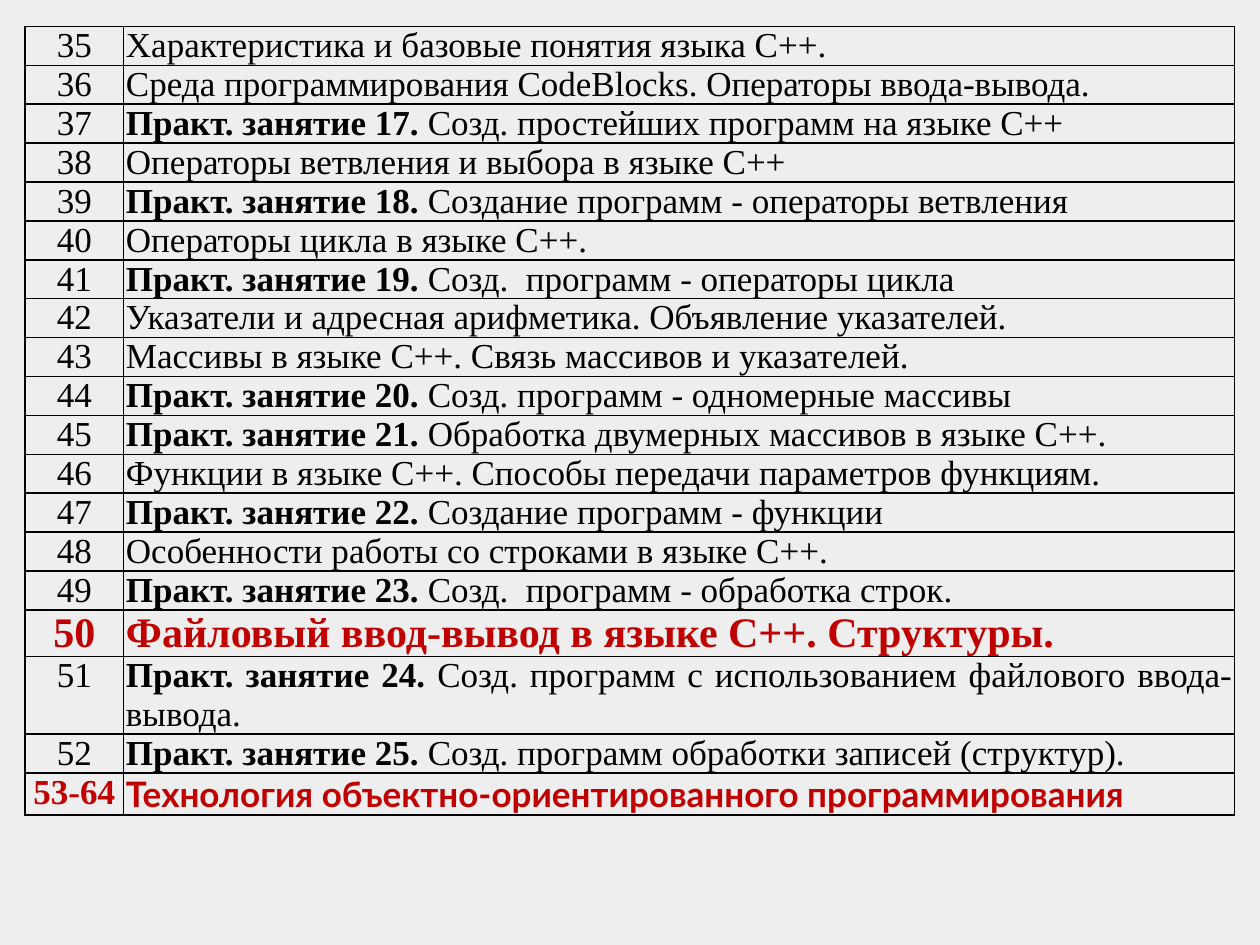
from lxml import etree
from pptx import Presentation
from pptx.dml.color import RGBColor
from pptx.enum.text import PP_ALIGN
from pptx.oxml.ns import qn
from pptx.util import Inches, Pt

LEFT, CENTER, JUSTIFY = PP_ALIGN.LEFT, PP_ALIGN.CENTER, PP_ALIGN.JUSTIFY
COLORS = {"page": "EEEEEE", "text": "000000", "accent": "C00000"}
SERIF, SANS = "Times New Roman", "Lato"
FIRST_LESSON = 35

# Each lesson: bold lead, topic
LESSONS = [
    ("", "Характеристика и базовые понятия языка C++."),
    ("", "Среда программирования CodeBlocks. Операторы ввода-вывода."),
    ("Практ. занятие 17. ", "Созд. простейших программ на языке C++"),
    ("", "Операторы ветвления и выбора в языке С++"),
    ("Практ. занятие 18. ", "Создание программ - операторы ветвления"),
    ("", "Операторы цикла в языке C++."),
    ("Практ. занятие 19. ", "Созд.  программ - операторы цикла"),
    ("", "Указатели и адресная арифметика. Объявление указателей."),
    ("", "Массивы в языке C++. Связь массивов и указателей."),
    ("Практ. занятие 20. ", "Созд. программ - одномерные массивы"),
    ("Практ. занятие 21. ", "Обработка двумерных массивов в языке C++."),
    ("", "Функции в языке C++. Способы передачи параметров функциям."),
    ("Практ. занятие 22. ", "Создание программ - функции"),
    ("", "Особенности работы со строками в языке C++."),
    ("Практ. занятие 23. ", "Созд.  программ - обработка строк."),
    ("Файловый ввод-вывод в языке C++. Структуры.", ""),
    ("Практ. занятие 24. ", "Созд. программ с использованием файлового ввода-вывода."),
    ("Практ. занятие 25. ", "Созд. программ обработки записей (структур)."),
    ("Технология объектно-ориентированного программирования", ""),
]
# Formats that differ from the plain row, by lesson number
NUMBER_FORMATS = {
    50: {"size": 24, "color": "accent"},
    53: {"color": "accent"},
}
TOPIC_FORMATS = {
    50: {"size": 24, "color": "accent"},
    51: {"align": JUSTIFY},
    53: {"color": "accent", "font": SANS},
}


def write_cell(cell, lead, text, align=LEFT, size=20, color="text", font=SERIF):
    """Fill a cell with a bold lead and plain text, and frame it."""
    cell.margin_left = cell.margin_right = Inches(0.02)
    cell.margin_top = cell.margin_bottom = 0
    para = cell.text_frame.paragraphs[0]
    para.alignment = align
    for words, bold in ((lead, True), (text, False)):
        if words:
            span = para.add_run()
            span.text = words
            span.font.name = font
            span.font.size = Pt(size)
            span.font.bold = bold
            span.font.color.rgb = RGBColor.from_string(COLORS[color])

    properties = cell._tc.get_or_add_tcPr()
    for side in ("a:lnL", "a:lnR", "a:lnT", "a:lnB"):
        line = etree.SubElement(properties, qn(side), w=str(Pt(1)))
        fill = etree.SubElement(line, qn("a:solidFill"))
        etree.SubElement(fill, qn("a:srgbClr"), val=COLORS["text"])
    cell.fill.background()


# Page
deck = Presentation()
deck.slide_width, deck.slide_height = Inches(10), Inches(7.5)
page = deck.slides.add_slide(deck.slide_layouts[6])
page.background.fill.solid()
page.background.fill.fore_color.rgb = RGBColor.from_string(COLORS["page"])

# Lesson table; rows grow to fit their text
row_height = Inches(0.3)
table = page.shapes.add_table(
    len(LESSONS), 2, Inches(0.2), Inches(0.21), Inches(9.6), row_height * len(LESSONS)
).table
table.first_row = table.horz_banding = False
table.columns[0].width, table.columns[1].width = Inches(0.78), Inches(8.82)

for row, (lead, topic) in enumerate(LESSONS):
    number = FIRST_LESSON + row
    label = "53-64" if number == 53 else str(number)
    number_format = NUMBER_FORMATS.get(number, {})
    # Section headings have a bold number
    parts = (label, "") if number_format else ("", label)
    write_cell(table.cell(row, 0), *parts, align=CENTER, **number_format)
    write_cell(table.cell(row, 1), lead, topic, **TOPIC_FORMATS.get(number, {}))

deck.save("out.pptx")
